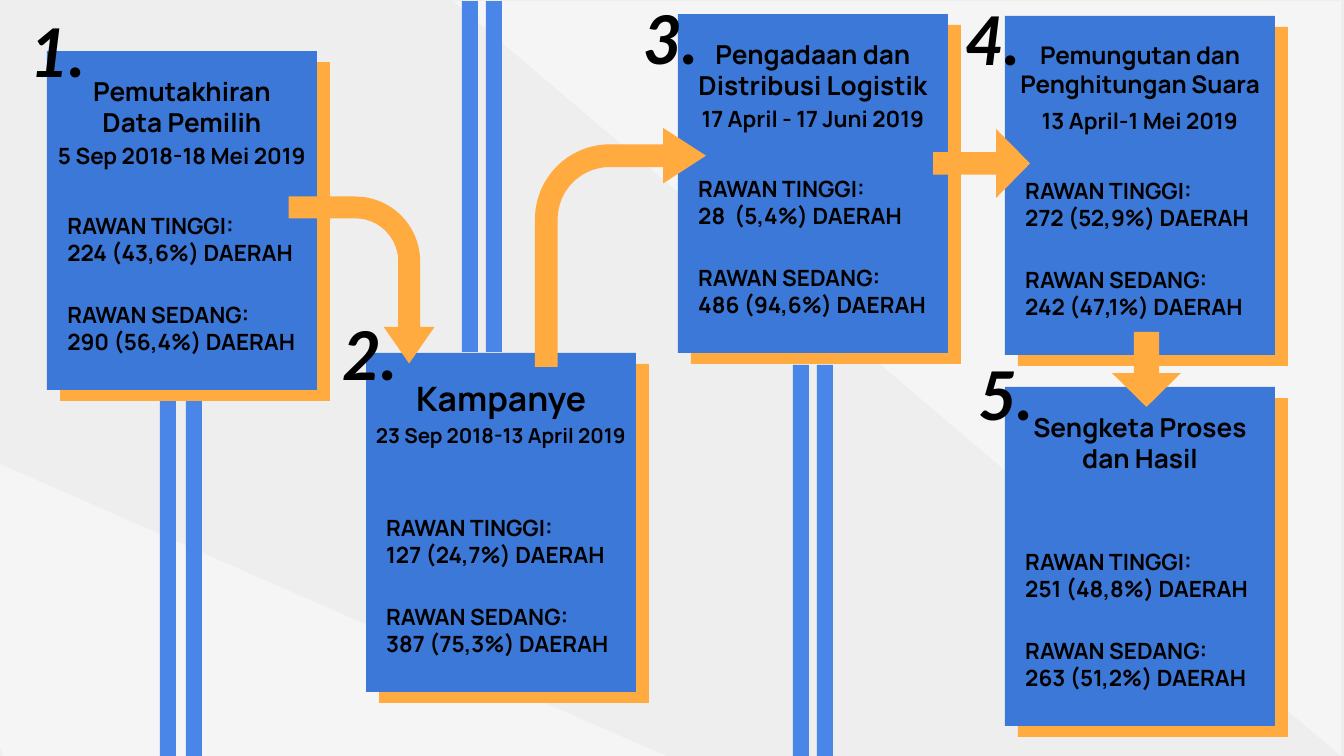
from copy import deepcopy

from lxml.etree import SubElement
from pptx import Presentation
from pptx.dml.color import RGBColor
from pptx.enum.shapes import MSO_SHAPE as Shape
from pptx.enum.text import PP_ALIGN as Align
from pptx.oxml.ns import qn
from pptx.util import Emu, Pt

PX = 914400 / 134.4
BLUE, LIGHT_BLUE, ORANGE = "3C78D8", "4A86E8", "FFAB40"
CARD_WIDTH, CARD_HEIGHT = 270, 339
SHADOW_X, SHADOW_Y = 13, 11
TEXT_WIDTH, TEXT_HEIGHT = 317, 79
STRIPE_WIDTH = 16

CARDS = [
    dict(at=(47, 51), number=(-30, -54), title="Pemutakhiran\nData Pemilih", size=14,
         date="5 Sep 2018-18 Mei 2019", high="224 (43,6%)", low="290 (56,4%)"),
    dict(at=(366, 353), number=(-37, -53), title="Kampanye", size=18,
         date="23 Sep 2018-13 April 2019", date_size=11, date_top=58,
         high="127 (24,7%)", low="387 (75,3%)"),
    dict(at=(678, 14), number=(-48, -30), title="Pengadaan dan Distribusi Logistik", size=14,
         date="17 April - 17 Juni 2019", high="28  (5,4%)", low="486 (94,6%)"),
    dict(at=(1005, 16), number=(-53, -31), title="Pemungutan dan Penghitungan Suara", size=13,
         date="13 April-1 Mei 2019", high="272 (52,9%)", low="242 (47,1%)"),
    dict(at=(1005, 387), number=(-40, -47), title="Sengketa Proses\ndan Hasil", size=14,
         high="251 (48,8%)", low="263 (51,2%)"),
]
STRIPE_PAIRS = [((160, 186), 378, 378), ((462, 486), 1, 351), ((793, 817), 365, 391)]
TRIANGLES = [((-43, 258, 624, 648), 337.6), ((453, 1, 888, 755), 180)]
ARROWS = [
    (Shape.BENT_ARROW, (278, 207, 167, 146), 90, (0.15, 0.174, 0.25, 0.445)),
    (Shape.BENT_ARROW, (535, 128, 171, 239), 0, (0.133, 0.162, 0.25, 0.438)),
    (Shape.RIGHT_ARROW, (933, 129, 97, 69), 0, (0.326, 0.491)),
    (Shape.RIGHT_ARROW, (1109, 335, 75, 69), 90, (0.366, 0.491)),
]


def px(*lengths):
    return [Emu(round(length * PX)) for length in lengths]


def color(value):
    return RGBColor.from_string(value)


def add_shape(slide, kind, box, fill, rotation=0, adjustments=(), alpha=None):
    shape = slide.shapes.add_shape(kind, *px(*box))
    shape.shadow.inherit = False
    shape.fill.solid()
    shape.fill.fore_color.rgb = color(fill)
    shape.line.fill.background()
    shape.rotation = rotation
    for index, value in enumerate(adjustments):
        shape.adjustments[index] = value
    if alpha is not None:
        rgb = shape._element.spPr.find(".//" + qn("a:srgbClr"))
        SubElement(rgb, qn("a:alpha"), val=str(alpha * 1000))


def add_text(slide, text, left, top, width=TEXT_WIDTH, height=TEXT_HEIGHT,
             size=12, font="Manrope", italic=False, align=Align.LEFT):
    frame = slide.shapes.add_textbox(*px(left, top, width, height)).text_frame
    frame.word_wrap = True
    frame.margin_left, frame.margin_top, frame.margin_right, frame.margin_bottom = px(*[13.44] * 4)
    frame.text = text
    for paragraph in frame.paragraphs:
        paragraph.alignment = align
        for run in paragraph.runs:
            run.font.name, run.font.size = font, Pt(size)
            run.font.bold, run.font.italic = True, italic
            run.font.color.rgb = color("000000")
        for line_break in paragraph._p.findall(qn("a:br")):
            line_break.append(deepcopy(paragraph._p.find(qn("a:r")).find(qn("a:rPr"))))


def add_card(slide, card):
    left, top = card["at"]
    for offset_x, offset_y, fill in ((SHADOW_X, SHADOW_Y, ORANGE), (0, 0, BLUE)):
        add_shape(slide, Shape.RECTANGLE,
                  (left + offset_x, top + offset_y, CARD_WIDTH, CARD_HEIGHT), fill)
    center_left = left + (CARD_WIDTH - TEXT_WIDTH) / 2
    add_text(slide, card["title"], center_left, top + 11, size=card["size"], align=Align.CENTER)
    if "date" in card:
        add_text(slide, card["date"], center_left, top + card.get("date_top", 78),
                 size=card.get("date_size", 12), align=Align.CENTER)
    for level, value, offset in (("TINGGI", card["high"], 148), ("SEDANG", card["low"], 237)):
        add_text(slide, f"RAWAN {level}:\v{value} DAERAH", left + 7, top + offset)


def main():
    """Build the slide of five election stages and their risk levels."""
    presentation = Presentation()
    presentation.slide_width, presentation.slide_height = px(1344, 756)
    slide = presentation.slides.add_slide(presentation.slide_layouts[6])
    slide.background.fill.solid()
    slide.background.fill.fore_color.rgb = color("EEEEEE")

    for box, rotation in TRIANGLES:
        add_shape(slide, Shape.RIGHT_TRIANGLE, box, "FFFFFF", rotation=rotation, alpha=42)
    for lefts, top, height in STRIPE_PAIRS:
        for left in lefts:
            add_shape(slide, Shape.RECTANGLE, (left, top, STRIPE_WIDTH, height), LIGHT_BLUE)
    for card in CARDS:
        add_card(slide, card)
    for kind, box, rotation, adjustments in ARROWS:
        add_shape(slide, kind, box, ORANGE, rotation, adjustments)
    for number, card in enumerate(CARDS, 1):
        (left, top), (offset_x, offset_y) = card["at"], card["number"]
        add_text(slide, f"{number}.", left + offset_x, top + offset_y, width=97, height=126,
                 size=36, font="Lato", italic=True)
    presentation.save("out.pptx")


if __name__ == "__main__":
    main()
